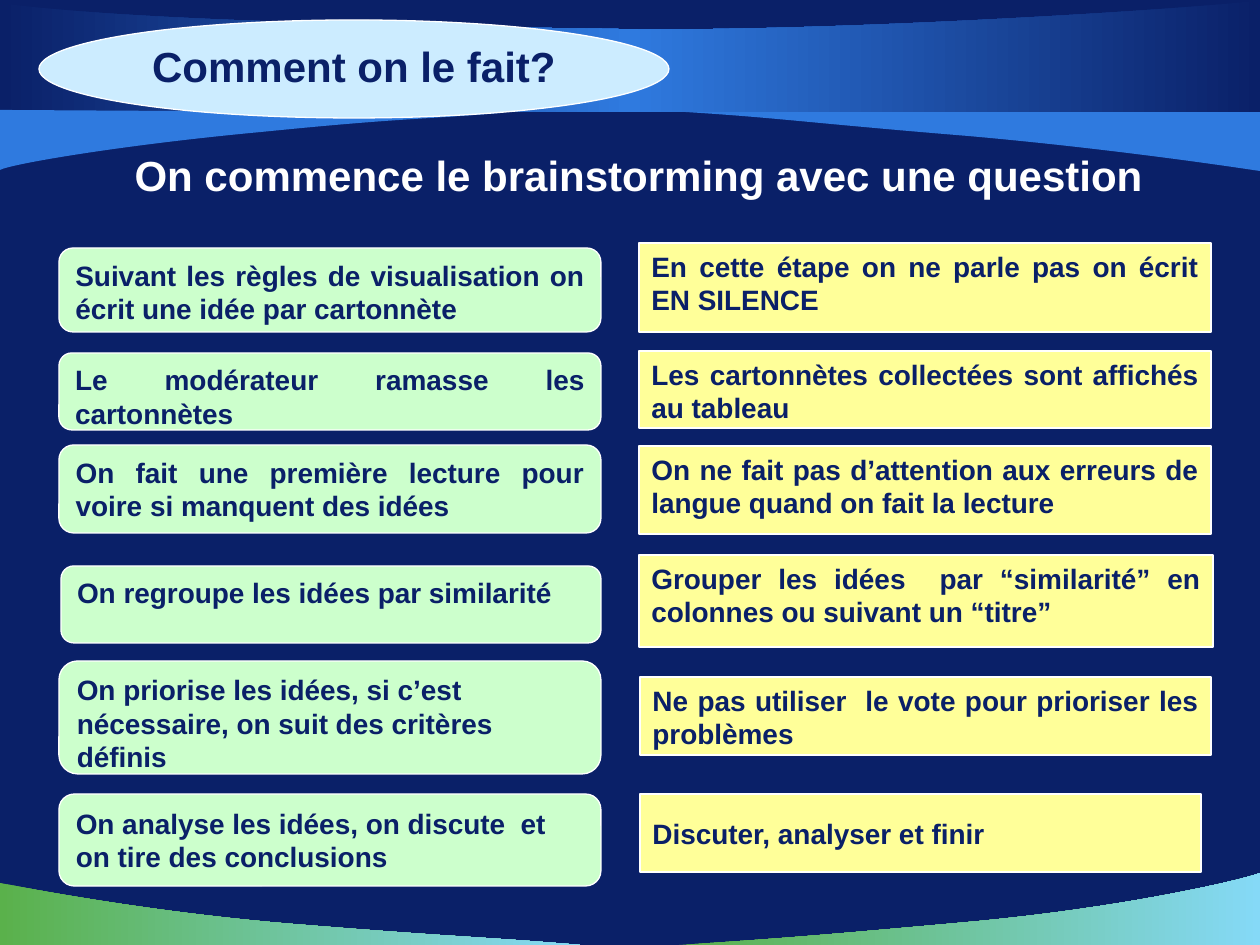
from lxml import etree
from pptx import Presentation
from pptx.dml.color import RGBColor
from pptx.enum.shapes import MSO_SHAPE
from pptx.enum.text import MSO_ANCHOR, MSO_AUTO_SIZE, PP_ALIGN
from pptx.oxml.ns import qn
from pptx.util import Pt

PX = 914400 / 126
FONT = "Arial"
NAVY = RGBColor(0x0A, 0x20, 0x68)
BLUE = RGBColor(0x2F, 0x7A, 0xDF)
GREEN = RGBColor(0x5A, 0xB1, 0x4B)
SKY = RGBColor(0x85, 0xD9, 0xF7)
MINT = RGBColor(0xCC, 0xFF, 0xCC)
YELLOW = RGBColor(0xFF, 0xFF, 0x99)
ICE = RGBColor(0xCC, 0xEC, 0xFF)
WHITE = RGBColor(0xFF, 0xFF, 0xFF)
RECT, ROUNDED, OVAL = MSO_SHAPE.RECTANGLE, MSO_SHAPE.ROUNDED_RECTANGLE, MSO_SHAPE.OVAL
TOP, MIDDLE = MSO_ANCHOR.TOP, MSO_ANCHOR.MIDDLE
LEFT, CENTER, JUSTIFY = PP_ALIGN.LEFT, PP_ALIGN.CENTER, PP_ALIGN.JUSTIFY
NO_AUTOFIT = MSO_AUTO_SIZE.NONE

WAVES = [
    ([(580, 945), (484, 937, 451, 937, 292, 924), (134, 911, 1, 883, 0, 883),
      (0, 945)], [GREEN, SKY]),
    ([(679, 945), (774, 939, 814, 936, 969, 922), (1124, 908, 1247, 879, 1260, 873),
      (1260, 945)], [GREEN, SKY]),
    ([(685, 112), (781, 118, 809, 123, 968, 136), (1126, 150, 1259, 171, 1260, 171),
      (1260, 111)], [BLUE]),
    ([(0, 112), (1260, 112), (1260, 0), (1215, 8, 823, 33, 614, 29),
      (404, 26, 127, 21, 0, 3)], [NAVY, BLUE, NAVY]),
    ([(501, 113), (417, 120, 401, 118, 262, 132), (122, 145, 11, 164, 0, 170),
      (0, 110)], [BLUE]),
]
STEPS_DONE = [
    ((59, 248, 542, 84), JUSTIFY, TOP,
     "Suivant les règles de visualisation on écrit une idée par cartonnète"),
    ((59, 353, 542, 77), JUSTIFY, TOP, "Le modérateur ramasse les cartonnètes"),
    ((59, 445, 542, 88), JUSTIFY, TOP,
     "On fait une première lecture pour voire si manquent des idées"),
    ((61, 566, 540, 77), JUSTIFY, TOP, "On regroupe les idées par similarité"),
    ((59, 661, 542, 113), LEFT, TOP,
     "On priorise les idées, si c’est nécessaire, on suit des critères définis"),
    ((59, 794, 542, 92), LEFT, MIDDLE,
     "On analyse les idées, on discute  et on tire des conclusions"),
]
ADVICE = [
    ((639, 243, 572, 89), JUSTIFY, TOP,
     "En cette étape on ne parle pas on écrit EN SILENCE"),
    ((639, 351, 572, 77), JUSTIFY, TOP,
     "Les cartonnètes collectées sont affichés au tableau "),
    ((639, 446, 572, 88), JUSTIFY, TOP,
     "On ne fait pas d’attention aux erreurs de langue quand on fait la lecture"),
    ((639, 555, 574, 92), JUSTIFY, TOP,
     "Grouper les idées  par “similarité” en colonnes ou suivant un “titre”"),
    ((640, 677, 571, 78), JUSTIFY, TOP,
     "Ne pas utiliser  le vote pour prioriser les problèmes "),
    ((640, 794, 561, 78), JUSTIFY, MIDDLE, "Discuter, analyser et finir"),
]


def px(n):
    """Turn pixels into EMU."""
    return round(n * PX)


def paint(sp, colors):
    """Fill a shape with one colour or a left-to-right gradient."""
    if len(colors) == 1:
        sp.fill.solid()
        sp.fill.fore_color.rgb = colors[0]
        return
    sp.fill.gradient()
    sp.fill.gradient_angle = 0
    stops = sp._element.spPr.find(".//" + qn("a:gsLst"))
    for stop in list(stops):
        stops.remove(stop)
    for i, color in enumerate(colors):
        position = str(100000 * i // (len(colors) - 1))
        stop = etree.SubElement(stops, qn("a:gs"), pos=position)
        etree.SubElement(stop, qn("a:srgbClr"), val=str(color))


def bend(sp, segments):
    """Turn the straight sides that have control points into cubic curves."""
    ends = [seg[-2:] for seg in segments]
    left, top = (min(values) for values in zip(*ends))
    sides = list(sp._element.spPr.iter(qn("a:lnTo")))
    for side, seg in zip(sides, segments[1:]):
        if len(seg) == 2:
            continue
        curve = etree.Element(qn("a:cubicBezTo"))
        for x, y in zip(seg[::2], seg[1::2]):
            etree.SubElement(curve, qn("a:pt"), x=str(x - left), y=str(y - top))
        side.getparent().replace(side, curve)


def add_wave(s, segments, colors):
    """Draw one curved band of the background."""
    start, *rest = [seg[-2:] for seg in segments]
    builder = s.shapes.build_freeform(*start, scale=PX)
    builder.add_line_segments(rest, close=True)
    sp = builder.convert_to_shape()
    bend(sp, segments)
    sp.shadow.inherit = False
    paint(sp, colors)
    sp.line.fill.background()


def write(sp, text, size, color, align, anchor):
    """Write one bold paragraph into a shape."""
    tf = sp.text_frame
    tf.word_wrap = True
    tf.auto_size = NO_AUTOFIT
    tf.vertical_anchor = anchor
    p = tf.paragraphs[0]
    p.alignment = align
    p.space_before = Pt(0)
    r = p.add_run()
    r.text = text
    r.font.name = FONT
    r.font.size = Pt(size)
    r.font.bold = True
    r.font.color.rgb = color


def add_title(s, box, text):
    """Place the title in front of the waves."""
    sp = s.shapes.title
    s.shapes._spTree.append(sp._element)
    sp.left, sp.top, sp.width, sp.height = map(px, box)
    write(sp, text, 24, WHITE, LEFT, TOP)


def add_card(s, kind, color, box, align, anchor, text, size=16):
    """Add a coloured card with a thin white border and its text."""
    sp = s.shapes.add_shape(kind, *map(px, box))
    sp.shadow.inherit = False
    paint(sp, [color])
    sp.line.color.rgb = WHITE
    sp.line.width = Pt(0.75)
    write(sp, text, size, NAVY, align, anchor)


def main():
    """Build the slide."""
    prs = Presentation()
    prs.slide_width, prs.slide_height = px(1260), px(945)
    s = prs.slides.add_slide(prs.slide_layouts[5])
    s.background.fill.solid()
    s.background.fill.fore_color.rgb = NAVY
    for segments, colors in WAVES:
        add_wave(s, segments, colors)
    add_card(s, OVAL, ICE, (39, 20, 630, 98), CENTER, TOP, "Comment on le fait?", 24)
    add_title(s, (122, 143, 1068, 63), "On commence le brainstorming avec une question")
    for card in STEPS_DONE:
        add_card(s, ROUNDED, MINT, *card)
    for card in ADVICE:
        add_card(s, RECT, YELLOW, *card)
    prs.save("out.pptx")


if __name__ == "__main__":
    main()
